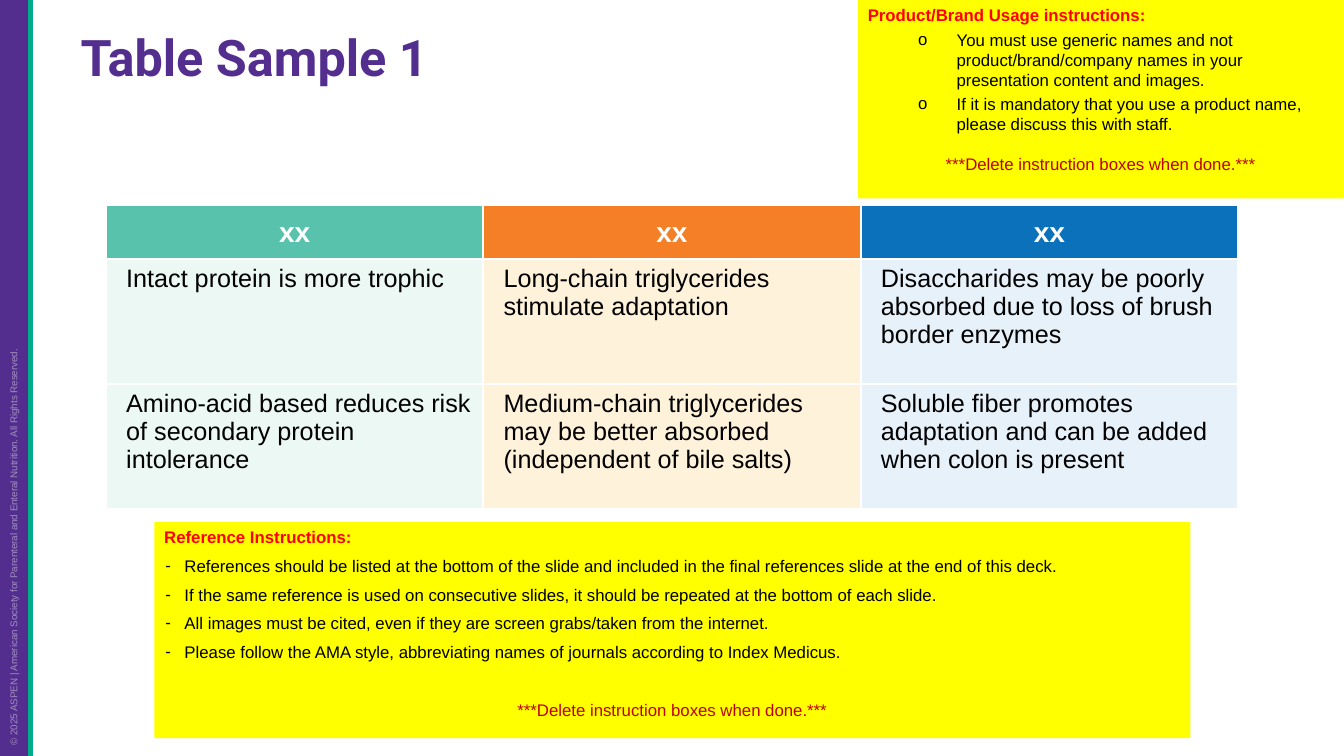
"""Build the Table Sample 1 slide with its two instruction boxes."""
from lxml import etree
from pptx import Presentation
from pptx.dml.color import RGBColor
from pptx.enum.shapes import MSO_CONNECTOR, MSO_SHAPE
from pptx.enum.text import MSO_ANCHOR, PP_ALIGN
from pptx.oxml import parse_xml
from pptx.oxml.ns import nsdecls, qn
from pptx.util import Cm, Pt

PURPLE = RGBColor(0x54, 0x2E, 0x8E)
GREEN = RGBColor(0x00, 0xAC, 0x89)
PALE = RGBColor(0xF2, 0xF2, 0xF2)
WHITE = RGBColor(0xFF, 0xFF, 0xFF)
BLACK = RGBColor(0x00, 0x00, 0x00)
YELLOW = RGBColor(0xFF, 0xFF, 0x00)
RED = RGBColor(0xFF, 0x00, 0x00)
DARK_RED = RGBColor(0xC0, 0x00, 0x00)
HEADER_FILLS = [RGBColor(0x59, 0xC2, 0xAD), RGBColor(0xF5, 0x7F, 0x26), RGBColor(0x0A, 0x71, 0xBA)]
BODY_FILLS = [RGBColor(0xEC, 0xF8, 0xF4), RGBColor(0xFF, 0xF2, 0xDB), RGBColor(0xE7, 0xF1, 0xF9)]


def style(p, size, color, bold=False, name="Arial"):
    """Format every run of a paragraph."""
    for r in p.runs:
        r.font.name = name
        r.font.size = Pt(size)
        r.font.bold = bold
        r.font.color.rgb = color


def add_box(left, top, width, height, fill):
    """Add a plain filled rectangle."""
    sp = s.shapes.add_shape(MSO_SHAPE.RECTANGLE, Cm(left), Cm(top), Cm(width), Cm(height))
    sp.shadow.inherit = False
    sp.fill.solid()
    sp.fill.fore_color.rgb = fill
    sp.line.fill.background()
    return sp


prs = Presentation()
prs.slide_width, prs.slide_height = Cm(33.87), Cm(19.05)
s = prs.slides.add_slide(prs.slide_layouts[6])

add_box(-0.03, 0, 0.76, 19.05, PURPLE)

sp = s.shapes.add_textbox(Cm(-7.85), Cm(10.46), Cm(16.38), Cm(0.76))
sp.rotation = 270
tf = sp.text_frame
tf.word_wrap = True
tf.vertical_anchor = MSO_ANCHOR.MIDDLE
tf.text = "© 2025 ASPEN | American Society for Parenteral and Enteral Nutrition. All Rights Reserved."
style(tf.paragraphs[0], 7, PALE)
for clr in tf.paragraphs[0].runs[0].font.fill._xPr.iter(qn("a:srgbClr")):
    etree.SubElement(clr, qn("a:alpha"), val="50000")

edge = s.shapes.add_connector(MSO_CONNECTOR.STRAIGHT, Cm(0.76), 0, Cm(0.76), Cm(19.05))
edge.line.color.rgb = GREEN
edge.line.width = Pt(3.75)
etree.SubElement(edge._element.spPr, qn("a:effectLst"))

sp = s.shapes.add_textbox(Cm(2.03), Cm(0.76), Cm(30.84), Cm(3.68))
tf = sp.text_frame
tf.word_wrap = True
tf.margin_left = tf.margin_top = tf.margin_right = tf.margin_bottom = 0
tf.text = "Table Sample 1"
tf.paragraphs[0].line_spacing = 0.95
style(tf.paragraphs[0], 36, PURPLE, True, "Roboto")

rows = [
    ["xx", "xx", "xx"],
    ["Intact protein is more trophic",
     "Long-chain triglycerides stimulate adaptation",
     "Disaccharides may be poorly absorbed due to loss of brush border enzymes"],
    ["Amino-acid based reduces risk of secondary protein intolerance",
     "Medium-chain triglycerides may be better absorbed (independent of bile salts)",
     "Soluble fiber promotes adaptation and can be added when colon is present"],
]
table = s.shapes.add_table(3, 3, Cm(2.67), Cm(5.18), Cm(28.53), Cm(7.65)).table
table.horz_banding = False
for col in table.columns:
    col.width = Cm(9.51)
for i, (row, height) in enumerate(zip(rows, [1.35, 3.15, 3.15])):
    table.rows[i].height = Cm(height)
    for j, text in enumerate(row):
        cell = table.cell(i, j)
        tcPr = cell._tc.get_or_add_tcPr()
        for side in ("lnL", "lnR", "lnT", "lnB"):
            tcPr.append(parse_xml(
                f'<a:{side} {nsdecls("a")} w="19050"><a:solidFill>'
                f'<a:srgbClr val="{WHITE}"/></a:solidFill></a:{side}>'))
        cell.fill.solid()
        cell.fill.fore_color.rgb = BODY_FILLS[j] if i else HEADER_FILLS[j]
        cell.text = text
        p = cell.text_frame.paragraphs[0]
        if i:
            cell.margin_left = Cm(0.51)
            p.space_after = Pt(6)
            style(p, 18, BLACK)
        else:
            cell.vertical_anchor = MSO_ANCHOR.MIDDLE
            p.alignment = PP_ALIGN.CENTER
            style(p, 20, WHITE, True)

notices = [
    ((3.89, 13.16, 26.11, 5.44), "Reference Instructions:", "-", (0.51, -0.48), 0, 6, 21, [
        "References should be listed at the bottom of the slide and included in the final "
        "references slide at the end of this deck.",
        "If the same reference is used on consecutive slides, it should be repeated at the "
        "bottom of each slide.",
        "All images must be cited, even if they are screen grabs/taken from the internet.",
        "Please follow the AMA style, abbreviating names of journals according to Index Medicus.",
    ]),
    ((21.62, 0, 12.24, 5), "Product/Brand Usage instructions:", "o", (2.24, -0.97), 3, 0, 14, [
        "You must use generic names and not product/brand/company names in your presentation "
        "content and images.",
        "If it is mandatory that you use a product name, please discuss this with staff.",
    ]),
]
for place, heading, bullet, (margin, indent), before, after, gap, items in notices:
    tf = add_box(*place, YELLOW).text_frame
    tf.word_wrap = True
    tf.vertical_anchor = MSO_ANCHOR.TOP
    tf.text = heading
    p = tf.paragraphs[0]
    p.alignment = PP_ALIGN.LEFT
    p.space_after = Pt(after)
    style(p, 12, RED, True)
    for item in items:
        p = tf.add_paragraph()
        p.text = item
        pPr = p._p.get_or_add_pPr()
        pPr.set("marL", str(Cm(margin)))
        pPr.set("indent", str(Cm(indent)))
        etree.SubElement(pPr, qn("a:buFont"), typeface="Arial")
        etree.SubElement(pPr, qn("a:buChar"), char=bullet)
        p.alignment = PP_ALIGN.LEFT
        p.space_before = Pt(before)
        p.space_after = Pt(after)
        style(p, 12, BLACK)
    p = tf.add_paragraph()
    p.text = "***Delete instruction boxes when done.***"
    p.alignment = PP_ALIGN.CENTER
    p.space_before = Pt(gap)
    style(p, 12, DARK_RED)

prs.save("out.pptx")
